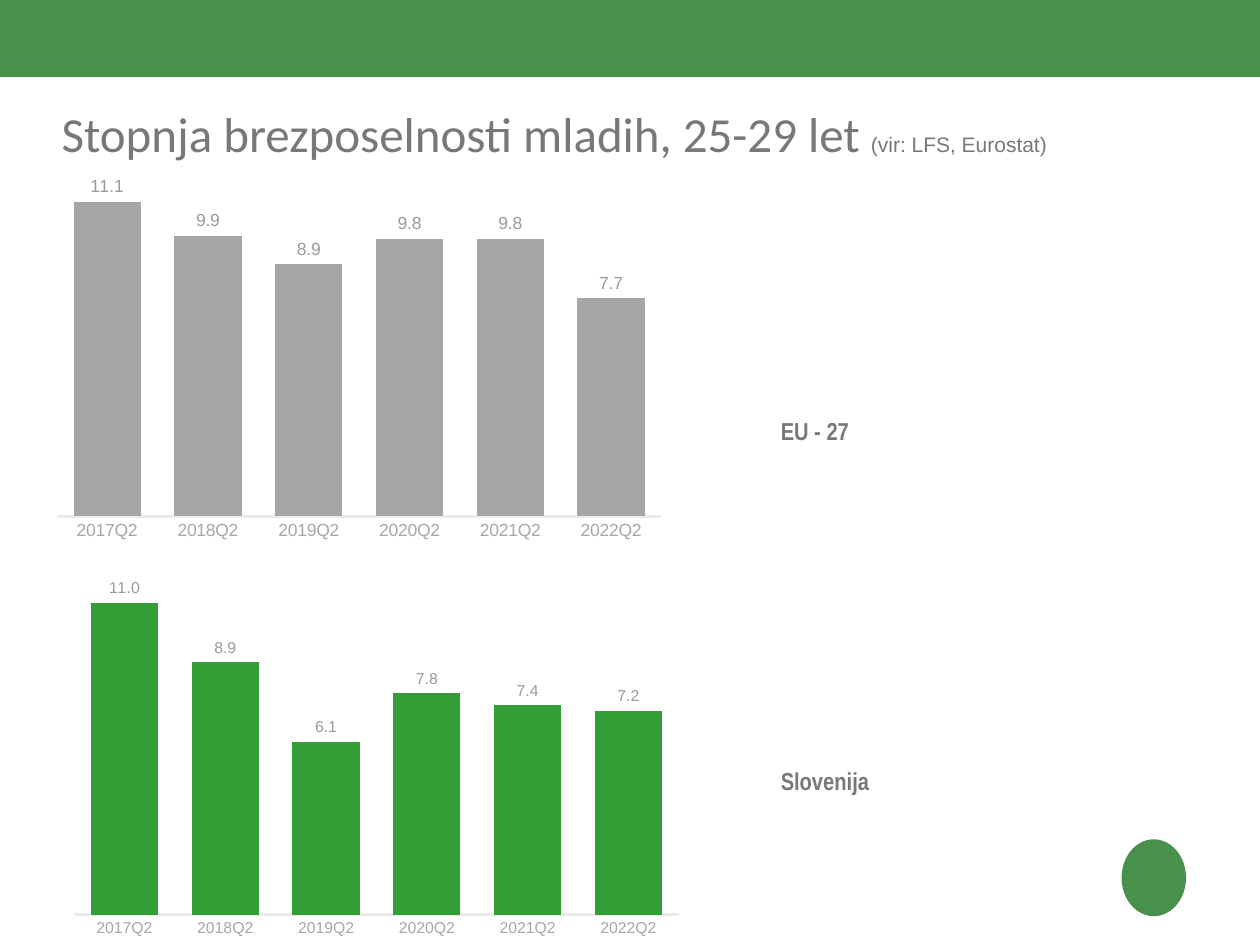
import pptx
import pptx.chart.data
import pptx.dml.color
import pptx.enum.chart
import pptx.enum.shapes
import pptx.enum.text
import pptx.oxml
import pptx.oxml.ns
import pptx.util
from pptx.util import Cm, Pt

RGBColor = pptx.dml.color.RGBColor
BRAND_GREEN = RGBColor(0x49, 0x90, 0x4D)
EU_GREY = RGBColor(0xA6, 0xA6, 0xA6)
SLOVENIA_GREEN = RGBColor(0x33, 0x9E, 0x35)
TEXT_GREY = RGBColor(0x79, 0x77, 0x77)
AXIS_TEXT = RGBColor(0xA8, 0xA7, 0xA7)
VALUE_TEXT = RGBColor(0x9B, 0x99, 0x99)
AXIS_LINE = RGBColor(0xEB, 0xEB, 0xEB)

QUARTERS = [f"{year}Q2" for year in range(2017, 2023)]
CHART_WIDTH, CHART_HEIGHT = Cm(12.7), Cm(7.62)

CHART_FILL = (
    f'<c:spPr {pptx.oxml.ns.nsdecls("c", "a")}><a:solidFill>'
    '<a:srgbClr val="FFFFFF"/></a:solidFill><a:ln><a:noFill/></a:ln></c:spPr>'
)
PLOT_LAYOUT = (
    f'<c:layout {pptx.oxml.ns.nsdecls("c")}><c:manualLayout>'
    '<c:layoutTarget val="inner"/><c:xMode val="edge"/><c:yMode val="edge"/>'
    '<c:x val="0.02"/><c:y val="0.02"/><c:w val="0.96"/><c:h val="0.9"/>'
    '</c:manualLayout></c:layout>'
)


def style_font(font, name, size, color, bold=False):
    font.name = name
    font.size = Pt(size)
    font.color.rgb = color
    font.bold = bold


def add_run(paragraph, text, name, size, bold=False):
    run = paragraph.add_run()
    run.text = text
    style_font(run.font, name, size, TEXT_GREY, bold)


def add_plain_shape(slide, preset, left, top, width, height):
    plain = slide.shapes.add_shape(preset, left, top, width, height)
    plain.shadow.inherit = False
    plain.fill.solid()
    plain.fill.fore_color.rgb = BRAND_GREEN
    plain.line.fill.background()


def place_title(slide, left, top, width, height):
    title = slide.shapes.title
    title.left, title.top, title.width, title.height = left, top, width, height
    frame = title.text_frame
    frame.margin_left = frame.margin_right = 0
    frame.margin_top = frame.margin_bottom = 0
    frame.vertical_anchor = pptx.enum.text.MSO_ANCHOR.TOP
    frame.auto_size = pptx.enum.text.MSO_AUTO_SIZE.NONE
    heading = frame.paragraphs[0]
    heading.alignment = pptx.enum.text.PP_ALIGN.LEFT
    add_run(heading, "Stopnja brezposelnosti mladih, 25-29 let ", "Calibri", 28)
    add_run(heading, "(vir: LFS, Eurostat)", "Arial", 12)


def add_rate_chart(slide, left, top, rates, bar_color, size):
    rate_data = pptx.chart.data.CategoryChartData(number_format="0.0")
    rate_data.categories = QUARTERS
    rate_data.add_series("Series 1", rates)
    chart = slide.shapes.add_chart(
        pptx.enum.chart.XL_CHART_TYPE.COLUMN_CLUSTERED,
        left, top, CHART_WIDTH, CHART_HEIGHT, rate_data).chart
    chart.has_title = False
    chart.has_legend = False
    style_font(chart.font, "Arial", 10, TEXT_GREY)

    # White background and fixed plot area
    chart_space = chart.element
    chart_space.chart.addnext(pptx.oxml.parse_xml(CHART_FILL))
    plot_area = chart_space.chart.plotArea
    for layout in plot_area.findall(pptx.oxml.ns.qn("c:layout")):
        plot_area.remove(layout)
    plot_area.insert(0, pptx.oxml.parse_xml(PLOT_LAYOUT))

    # Axes
    for axis in (chart.category_axis, chart.value_axis):
        axis.has_major_gridlines = False
        axis.major_tick_mark = pptx.enum.chart.XL_TICK_MARK.NONE
        axis.minor_tick_mark = pptx.enum.chart.XL_TICK_MARK.NONE
        style_font(axis.tick_labels.font, "Arial", size, AXIS_TEXT)
    quarter_line = chart.category_axis.format.line
    quarter_line.color.rgb = AXIS_LINE
    quarter_line.width = Pt(1.5)
    rate_axis = chart.value_axis
    rate_axis.minimum_scale, rate_axis.maximum_scale = 0, 12
    rate_axis.tick_label_position = pptx.enum.chart.XL_TICK_LABEL_POSITION.NONE
    rate_axis.format.line.fill.background()

    # Bars and their values
    plot = chart.plots[0]
    plot.gap_width, plot.overlap = 50, -27
    plot.vary_by_categories = False
    bars = plot.series[0]
    bars.format.fill.solid()
    bars.format.fill.fore_color.rgb = bar_color
    values = bars.data_labels
    values.show_value = True
    values.number_format = "0.0"
    values.number_format_is_linked = False
    values.position = pptx.enum.chart.XL_LABEL_POSITION.OUTSIDE_END
    style_font(values.font, "Arial", size, VALUE_TEXT)


def add_region_label(slide, left, top, region):
    label = slide.shapes.add_textbox(left, top, Cm(4.29), Cm(0.86))
    label.text_frame.word_wrap = True
    add_run(label.text_frame.paragraphs[0], region, "Arial Narrow", 14, True)


def main():
    deck = pptx.Presentation()
    deck.slide_width, deck.slide_height = Cm(25.4), Cm(19.05)
    slide = deck.slides.add_slide(deck.slide_layouts[5])
    shape_kinds = pptx.enum.shapes.MSO_SHAPE

    # Top band and plain emblem in the corner
    add_plain_shape(slide, shape_kinds.RECTANGLE, 0, 0, deck.slide_width, Cm(1.55))
    add_plain_shape(slide, shape_kinds.OVAL, Cm(22.61), Cm(16.92), Cm(1.3), Cm(1.55))

    place_title(slide, Cm(1.24), Cm(2.08), Cm(23.52), Cm(1.8))

    # One label and one chart per region
    add_region_label(slide, Cm(15.49), Cm(8.26), "EU - 27")
    add_region_label(slide, Cm(15.49), Cm(15.32), "Slovenija")
    add_rate_chart(slide, Cm(0.89), Cm(3.4),
                   (11.1, 9.9, 8.9, 9.8, 9.8, 7.7), EU_GREY, 10)
    add_rate_chart(slide, Cm(1.24), Cm(11.43),
                   (11.0, 8.9, 6.1, 7.8, 7.4, 7.2), SLOVENIA_GREEN, 9)

    deck.save("out.pptx")


if __name__ == "__main__":
    main()
